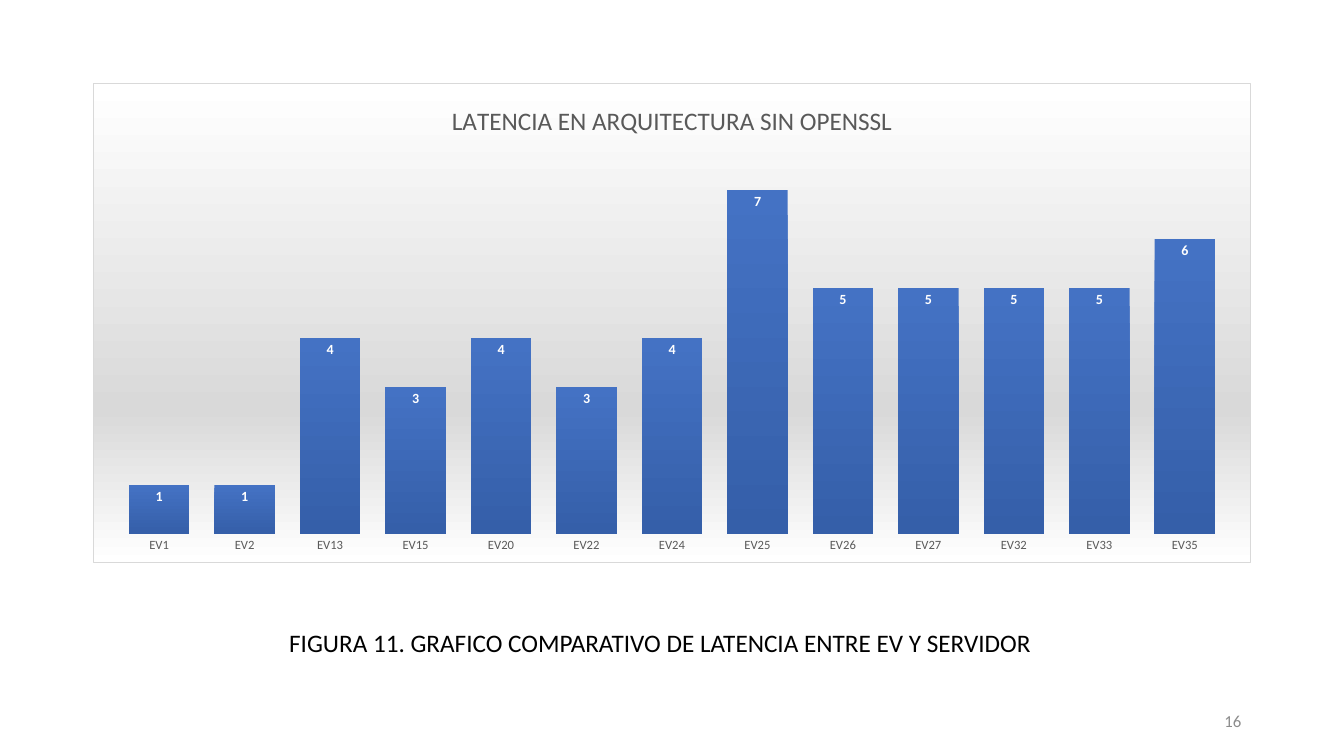
"""Build the latency chart slide with its figure caption and page number."""
from lxml import etree
from pptx import Presentation
from pptx.chart.data import CategoryChartData
from pptx.dml.color import RGBColor
from pptx.enum.chart import XL_CHART_TYPE, XL_LABEL_POSITION, XL_TICK_MARK
from pptx.enum.text import MSO_ANCHOR, PP_ALIGN
from pptx.oxml import parse_xml
from pptx.oxml.ns import nsdecls, qn
from pptx.util import Inches, Pt

COLUMNS = XL_CHART_TYPE.COLUMN_CLUSTERED
INSIDE_END = XL_LABEL_POSITION.INSIDE_END
NO_TICK = XL_TICK_MARK.NONE
LEFT, RIGHT = PP_ALIGN.LEFT, PP_ALIGN.RIGHT
TOP, MIDDLE = MSO_ANCHOR.TOP, MSO_ANCHOR.MIDDLE

WIDTH, HEIGHT = 13.33, 7.5
FONT = "Calibri"
COLORS = {
    "white": "FFFFFF", "black": "000000", "gray": "595959", "page": "8C8C8C",
    "silver": "D9D9D9", "blue": "4472C4", "navy": "355FA9",
}
LATENCY = {
    "EV1": 1, "EV2": 1, "EV13": 4, "EV15": 3, "EV20": 4, "EV22": 3, "EV24": 4,
    "EV25": 7, "EV26": 5, "EV27": 5, "EV32": 5, "EV33": 5, "EV35": 6,
}
PLOT_AREA = {"x": 0.02, "y": 0.12, "w": 0.96, "h": 0.82}


def style_font(font, size, color, bold=False):
    """Give a font its face, size, colour and weight."""
    font.name, font.size, font.bold = FONT, Pt(size), bold
    font.color.rgb = RGBColor.from_string(COLORS[color])


def add_text(page, text, frame, size, color, align=LEFT, anchor=TOP):
    """Add a one-paragraph text box."""
    box = page.shapes.add_textbox(*map(Inches, frame))
    box.text_frame.word_wrap = True
    box.text_frame.vertical_anchor = anchor
    para = box.text_frame.paragraphs[0]
    para.text, para.alignment = text, align
    style_font(para.font, size, color)


def vertical_gradient(stops):
    """Return a top-to-bottom gradient from (percent, colour) stops."""
    marks = "".join(
        f'<a:gs pos="{percent * 1000}"><a:srgbClr val="{COLORS[color]}"/></a:gs>'
        for percent, color in stops)
    return parse_xml(f'<a:gradFill {nsdecls("a")} rotWithShape="1"><a:gsLst>{marks}'
                     '</a:gsLst><a:lin ang="5400000" scaled="0"/></a:gradFill>')


def paint_chart_area(chart):
    """Give the chart area a gradient and a thin border."""
    area = parse_xml(f'<c:spPr {nsdecls("c", "a")}><a:ln w="{Pt(0.75)}"><a:solidFill>'
                     f'<a:srgbClr val="{COLORS["silver"]}"/></a:solidFill></a:ln></c:spPr>')
    area.insert(0, vertical_gradient([(0, "white"), (68, "silver"), (100, "white")]))
    chart._chartSpace.find(qn("c:chart")).addnext(area)


def place_plot_area(chart):
    """Fix the inner plot area as shares of the chart."""
    plot_area = chart._chartSpace.find(qn("c:chart")).find(qn("c:plotArea"))
    for old in plot_area.findall(qn("c:layout")):
        plot_area.remove(old)
    layout = etree.Element(qn("c:layout"))
    manual = etree.SubElement(layout, qn("c:manualLayout"))
    settings = {"layoutTarget": "inner", "xMode": "edge", "yMode": "edge", **PLOT_AREA}
    for name, value in settings.items():
        etree.SubElement(manual, qn(f"c:{name}")).set("val", str(value))
    plot_area.insert(0, layout)


def style_axes(chart):
    """Show only the category names and fix the value scale."""
    names, values = chart.category_axis, chart.value_axis
    names.major_tick_mark = names.minor_tick_mark = NO_TICK
    names.format.line.fill.background()
    style_font(names.tick_labels.font, 9, "gray")
    values.visible = values.has_major_gridlines = False
    values.minimum_scale, values.maximum_scale = 0, 8


def style_columns(plot):
    """Paint the columns and label them inside their tops."""
    plot.gap_width, plot.vary_by_categories = 41, False
    series = plot.series[0]
    series.invert_if_negative = False
    series._element.get_or_add_spPr().append(
        vertical_gradient([(0, "blue"), (100, "navy")]))
    labels = series.data_labels
    labels.show_value, labels.position = True, INSIDE_END
    labels.number_format, labels.number_format_is_linked = "#,##0", False
    style_font(labels.font, 10, "white", bold=True)


def add_latency_chart(page, title, frame):
    """Add the column chart of latency by electric vehicle."""
    data = CategoryChartData(number_format="#,##0")
    data.categories = list(LATENCY)
    data.add_series("Series 1", list(LATENCY.values()))
    chart = page.shapes.add_chart(COLUMNS, *map(Inches, frame), data).chart
    paint_chart_area(chart)
    style_font(chart.font, 10, "black")
    chart.has_legend = False
    chart.has_title = True
    chart.chart_title.include_in_layout = False
    para = chart.chart_title.text_frame.paragraphs[0]
    para.text = title
    style_font(para.font, 18, "gray")
    place_plot_area(chart)
    style_axes(chart)
    style_columns(chart.plots[0])


def main():
    """Build and save the deck."""
    deck = Presentation()
    deck.slide_width, deck.slide_height = Inches(WIDTH), Inches(HEIGHT)
    page = deck.slides.add_slide(deck.slide_layouts[6])
    margin = WIDTH * 0.069
    content = WIDTH - 2 * margin
    add_text(page, "16", (WIDTH - margin - 3, 6.95, 3, 0.4), 12, "page", RIGHT, MIDDLE)
    add_latency_chart(page, "LATENCIA EN ARQUITECTURA SIN OPENSSL",
                      (margin, HEIGHT * 0.11, content, HEIGHT * 0.635))
    add_text(page, "FIGURA 11. GRAFICO COMPARATIVO DE LATENCIA ENTRE EV Y SERVIDOR",
             (2.77, 6.17, 8.1, 0.4), 18, "black")
    deck.save("out.pptx")


if __name__ == "__main__":
    main()
